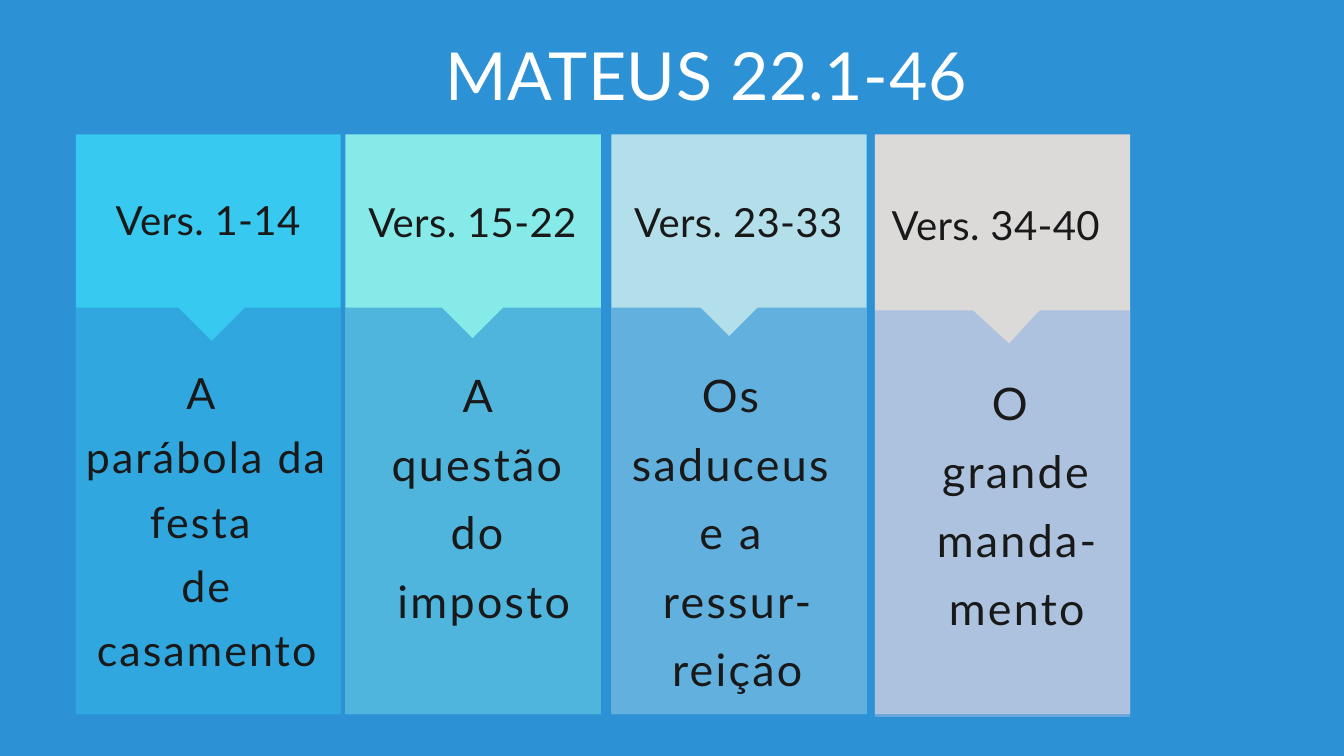
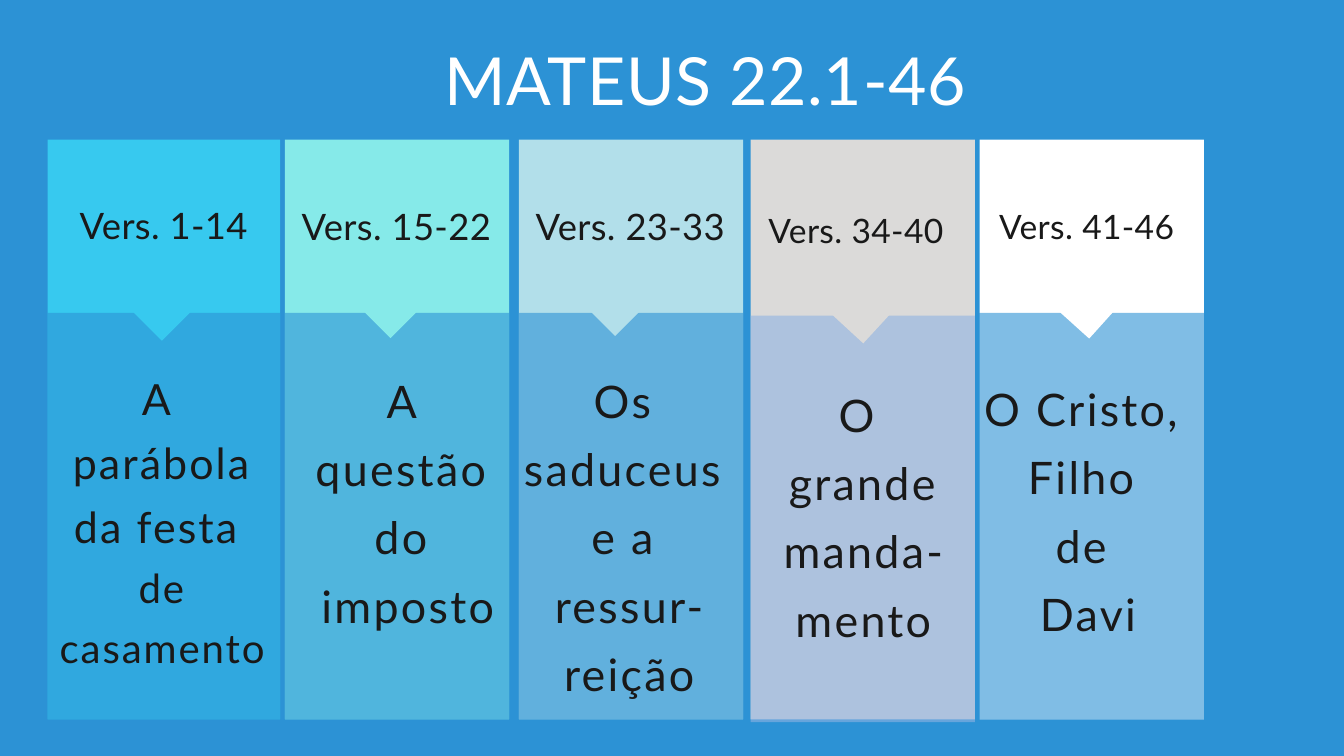
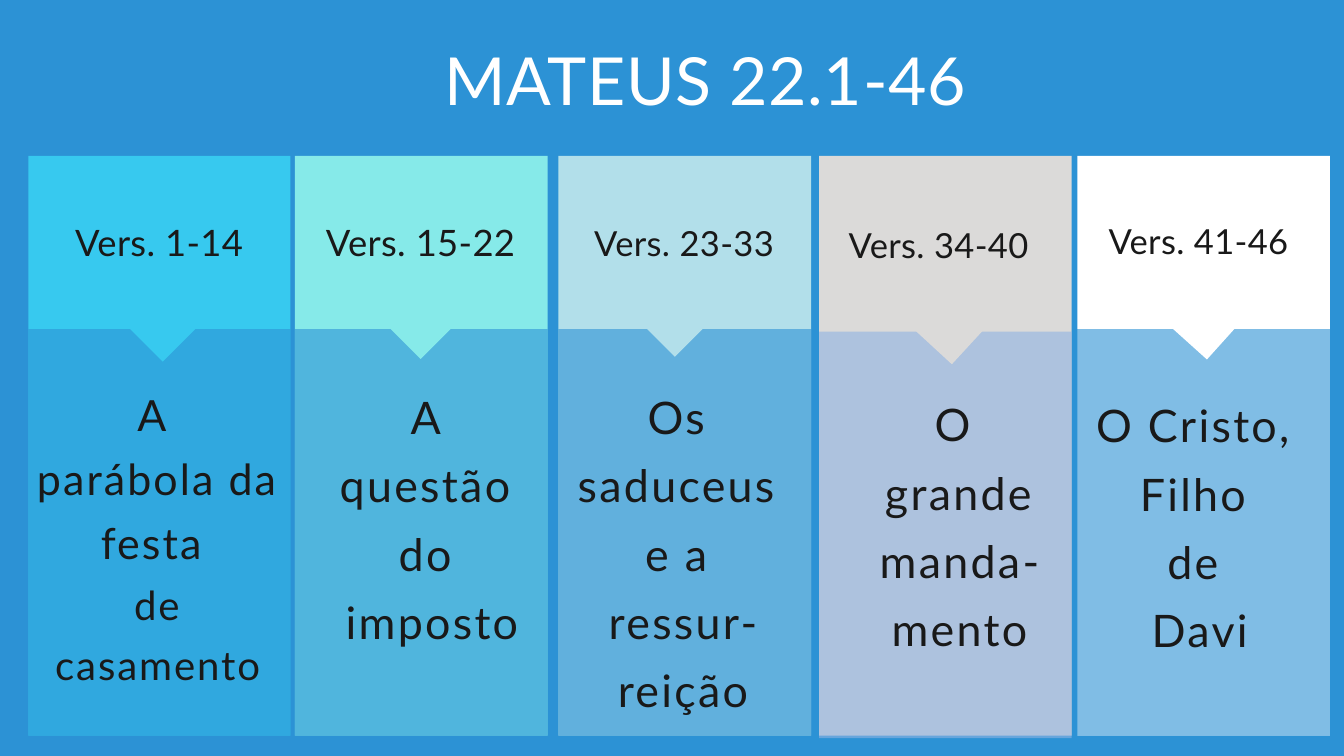
from typing import NamedTuple

from lxml.etree import SubElement
from pptx import Presentation
from pptx.dml.color import RGBColor
from pptx.enum.shapes import MSO_SHAPE as Shape
from pptx.enum.text import MSO_ANCHOR as Anchor, MSO_AUTO_SIZE as Auto, PP_ALIGN as Align
from pptx.oxml.ns import qn
from pptx.util import Cm, Pt


class Type(NamedTuple):
    size: float
    lead: float
    space: float
    tone: str = "191919"


class Theme:
    font = "Lato"
    blue = "2C92D5"
    haze = "8FB2E2"
    cyan = "37C9EF"
    mint = "86EAE9"
    ice = "B2DFEA"
    grey = "DBDAD9"
    white = "FFFFFF"
    veil = 60
    title = Type(71, 94.3, 0.7, white)
    body = Type(48, 73.3, 2.5)
    snug = Type(46, 68.8, 2.3)
    tight = Type(43, 64.2, 2.1)
    heads = {
        "xl": Type(43, 56, 0.4),
        "l": Type(39, 50.8, 0.4),
        "m": Type(39, 49.5, 0.4),
        "s": Type(37, 48.2, 0.4),
        "xs": Type(36, 47, 0.4),
    }
    frame = dict(margin_left=0, margin_right=0, margin_top=0, margin_bottom=0,
                 word_wrap=True, auto_size=Auto.NONE, vertical_anchor=Anchor.TOP)


class Topic(NamedTuple):
    verse: str
    lines: list
    rows: int
    type: Type
    tone: str
    veil: str
    head: tuple
    body: tuple
    tip: tuple
    arms: tuple
    slope: float = 1
    drop: float = 0
    bleed: float = 0


class Page(NamedTuple):
    title: tuple
    top: float
    lefts: list
    widths: tuple
    tip: tuple
    arm: float
    heads: list
    sizes: list
    last: Type
    nudge: dict


TOPICS = [
    Topic("Vers. 1-14", ["A ", "parábola da festa ", "de casamento"], 5, Theme.snug,
          Theme.cyan, Theme.blue, (0.34, -0.69), (0, 8.31, -0.12), (0, 0), (0, 1.75)),
    Topic("Vers. 15-22", ["A ", "questão ", "do ", "imposto"], 4, Theme.body,
          Theme.mint, Theme.blue, (0.17, -0.39), (0.17, 8.28, 0.47), (-0.33, -0.1), (-0.1, 2.03)),
    Topic("Vers. 23-33", ["Os ", "saduceus ", "e a ", "ressur-", "reição"], 5, Theme.body,
          Theme.ice, Theme.blue, (0.1, -0.25), (-0.3, 8.28, 0.47), (-0.68, -0.18), (-0.15, 1.87)),
    Topic("Vers. 34-40", ["O ", "grande manda-", "mento"], 4, Theme.body,
          Theme.grey, Theme.haze, (-0.13, -0.25), (0.3, 8.56, 0.47), (-0.06, 0.1), (-0.08, 1.78),
          slope=0.92, drop=0.1),
    Topic("Vers. 41-46", ["O Cristo, ", "Filho ", "de ", "Davi"], 4, Theme.body,
          Theme.white, Theme.blue, (-0.17, -0.05), (-0.38, 8.6, 0.47), (-0.18, -0.08), (0.08, 1.78),
          slope=0.9, bleed=0.08),
]

PAGES = [
    Page((14.2, 0.99), 5.08, [2.87, 13.06, 23.11, 33.07], (10.01, 9.65), (5.13, 12.88), 1.65,
         [2.16, 2.24, 2.24, 2.34], ["xl"] * 4, Theme.snug, {}),
    Page((14.17, 1.17), 5.28, [1.8, 10.77, 19.61, 28.37, 37.03], (8.79, 8.48), (4.32, 12.88), 1.24,
         [2.29, 2.34, 2.34, 2.54, 2.36], ["m", "m", "m", "xs", "xs"], Theme.tight,
         {3: (-0.51, 0.25)}),
    Page((14.17, 1.17), 5.89, [1.07, 11.15, 21.11, 30.96, 40.72], (9.91, 9.55), (5.08, 13.67), 1.63,
         [2.29, 2.34, 2.36, 2.46, 2.29], ["l", "m", "s", "s", "s"], Theme.tight, {}),
]
TITLE = "MATEUS 22.1-46"
TALL, NECK, BODY = 21.92, 6.55, 15.37


class Deck:
    def __init__(self, theme):
        self.theme = theme
        self.file = Presentation()
        self.file.slide_width, self.file.slide_height = Cm(50.8), Cm(28.58)
        self.paint(self.file.slide_master.background.fill, theme.blue)
        self.slide = None

    def paint(self, fill, tone):
        fill.solid()
        fill.fore_color.rgb = RGBColor.from_string(tone)

    def start(self, text, spot):
        self.slide = self.file.slides.add_slide(self.file.slide_layouts[5])
        box = self.slide.shapes.title
        place = dict(left=spot[0], top=spot[1], width=24.99, height=3.35)
        for key, value in place.items():
            setattr(box, key, Cm(value))
        self.typeset(box, [(text, self.theme.title)])

    def typeset(self, box, lines):
        frame = box.text_frame
        for key, value in self.theme.frame.items():
            setattr(frame, key, value)
        for i, (text, kind) in enumerate(lines):
            para = frame.add_paragraph() if i else frame.paragraphs[0]
            para.alignment = Align.CENTER
            para.line_spacing = Pt(kind.lead)
            run = para.add_run()
            run.text = text
            for key, value in dict(name=self.theme.font, size=Pt(kind.size), bold=False).items():
                setattr(run.font, key, value)
            run.font.color.rgb = RGBColor.from_string(kind.tone)
            run.font._element.set("spc", str(round(kind.space * 100)))

    def label(self, x, y, wide, lines, rows=1):
        high = Pt(rows * lines[0][1].lead)
        self.typeset(self.slide.shapes.add_textbox(Cm(x), Cm(y), Cm(wide), high), lines)

    def plain(self, shape, tone):
        shape.shadow.inherit = False
        shape.line.fill.background()
        self.paint(shape.fill, tone)

    def block(self, x, y, wide, high, tone, veil=None):
        shape = self.slide.shapes.add_shape(Shape.RECTANGLE, Cm(x), Cm(y), Cm(wide), Cm(high))
        self.plain(shape, tone)
        if veil:
            color = shape._element.spPr.find(".//" + qn("a:srgbClr"))
            SubElement(color, qn("a:alpha")).set("val", str(veil * 1000))

    def notch(self, x, y, left, right, slope, tone):
        pen = self.slide.shapes.build_freeform(Cm(x + right), Cm(y - right / slope))
        pen.add_line_segments([(Cm(x), Cm(y)), (Cm(x - left), Cm(y - left * slope))], close=True)
        self.plain(pen.convert_to_shape(), tone)

    def column(self, page, i):
        topic, x = TOPICS[i], page.lefts[i]
        wide = page.widths[min(i, 1)]
        self.block(x, page.top, wide, TALL, topic.tone)
        self.block(x - topic.bleed, page.top + NECK + topic.drop, wide + 2 * topic.bleed, BODY,
                   topic.veil, self.theme.veil)
        self.notch(x + page.tip[0] + topic.tip[0], page.tip[1] + topic.tip[1],
                   page.arm + topic.arms[0], topic.arms[1], topic.slope, topic.tone)
        shift, grow = topic.head
        self.label(x + shift, page.top + page.heads[i], wide + grow,
                   [(topic.verse, self.theme.heads[page.sizes[i]])])
        shift, down, grow = topic.body
        dx, dy = page.nudge.get(i, (0, 0))
        last = topic.type if i else page.last
        lines = [(text, topic.type) for text in topic.lines[:-1]] + [(topic.lines[-1], last)]
        self.label(x + shift + dx, page.top + down + dy, wide + grow, lines, topic.rows)


def main():
    deck = Deck(Theme())
    for page in PAGES:
        deck.start(TITLE, page.title)
        for i in range(len(page.lefts)):
            deck.column(page, i)
    deck.file.save("out.pptx")


if __name__ == "__main__":
    main()
